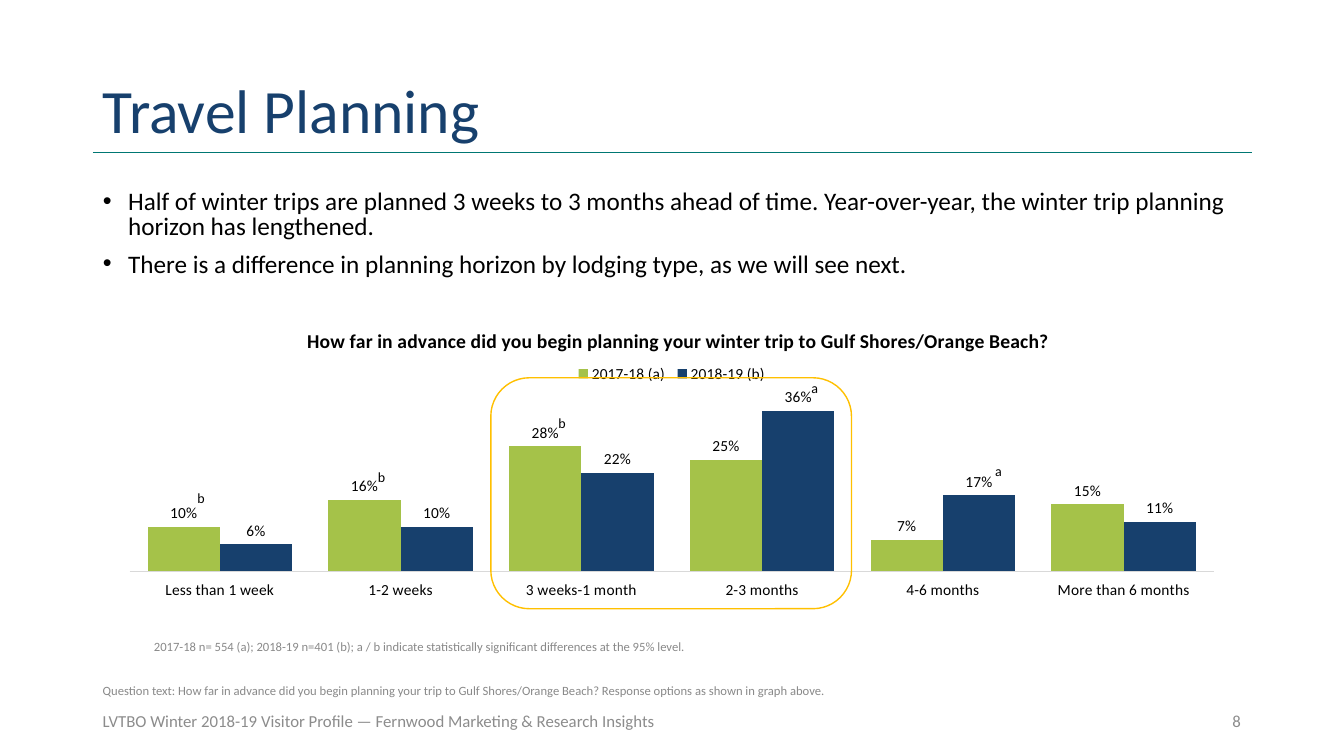
from lxml.etree import SubElement
from pptx import Presentation
from pptx.chart.data import CategoryChartData
from pptx.dml.color import RGBColor
from pptx.enum.chart import XL_CHART_TYPE as ChartType, XL_LABEL_POSITION as LabelPosition
from pptx.enum.chart import XL_LEGEND_POSITION as LegendPosition, XL_TICK_LABEL_POSITION as TickLabels
from pptx.enum.chart import XL_TICK_MARK as TickMark
from pptx.enum.shapes import MSO_CONNECTOR as Connector, MSO_SHAPE as Shape
from pptx.enum.text import MSO_ANCHOR as Anchor, MSO_AUTO_SIZE as AutoSize, PP_ALIGN as Align
from pptx.oxml import parse_xml
from pptx.oxml.ns import nsdecls, qn
from pptx.util import Cm, Pt

NAVY = RGBColor(0x17, 0x40, 0x6D)
GREEN = RGBColor(0xA5, 0xC2, 0x49)
TEAL = RGBColor(0x00, 0x77, 0x73)
GOLD = RGBColor(0xFF, 0xC0, 0x00)
BLACK = RGBColor(0x00, 0x00, 0x00)
FOOTER_GRAY = RGBColor(0x8C, 0x8C, 0x8C)
NOTE_GRAY = RGBColor(0x89, 0x89, 0x89)
AXIS_GRAY = RGBColor(0xD9, 0xD9, 0xD9)
FONT = "Calibri"

TITLE = "Travel Planning"
BULLETS = [
    "Half of winter trips are planned 3 weeks to 3 months ahead of time. "
    "Year-over-year, the winter trip planning horizon has lengthened.",
    "There is a difference in planning horizon by lodging type, as we will see next.",
]
CHART_TITLE = "How far in advance did you begin planning your winter trip to Gulf Shores/Orange Beach?"
CATEGORIES = ["Less than 1 week", "1-2 weeks", "3 weeks-1 month",
              "2-3 months", "4-6 months", "More than 6 months"]
SERIES = [
    ("2017-18 (a)", GREEN, [0.10, 0.16, 0.28, 0.25, 0.07, 0.15]),
    ("2018-19 (b)", NAVY, [0.06, 0.10, 0.22, 0.36, 0.17, 0.11]),
]
FOOTER = "LVTBO Winter 2018-19 Visitor Profile — Fernwood Marketing & Research Insights"
SAMPLE_NOTE = ("2017-18 n= 554 (a); 2018-19 n=401 (b); a / b indicate statistically "
               "significant differences at the 95% level.")
QUESTION_NOTE = ("Question text: How far in advance did you begin planning your trip to "
                 "Gulf Shores/Orange Beach? Response options as shown in graph above.")
SIGNIFICANCE_MARKS = [("a", 20.14, 9.45), ("a", 24.77, 11.53), ("b", 4.67, 12.22),
                      ("b", 9.22, 11.68), ("b", 13.77, 10.31)]

LEFT, WIDTH = 2.34, 29.21


def set_font(font, size, color, bold=False):
    """Apply the slide font with a size, colour and weight."""
    font.name, font.size, font.bold = FONT, Pt(size), bold
    font.color.rgb = color


def place(shape, left, top, width, height):
    """Move and size a shape in centimetres."""
    shape.left, shape.top, shape.width, shape.height = map(Cm, (left, top, width, height))


def add_text(slide, text, box, size, color, align=Align.LEFT, anchor=Anchor.TOP):
    """Add a one-paragraph text box."""
    frame = slide.shapes.add_textbox(*map(Cm, box)).text_frame
    frame.word_wrap = True
    frame.vertical_anchor = anchor
    paragraph = frame.paragraphs[0]
    paragraph.text, paragraph.alignment = text, align
    set_font(paragraph.font, size, color)


def set_layout(element, index, **values):
    """Give a chart part a manual layout as fractions of the chart."""
    for old in element.findall(qn("c:layout")):
        element.remove(old)
    layout = parse_xml(f"<c:layout {nsdecls('c')}><c:manualLayout/></c:layout>")
    for name, value in values.items():
        SubElement(layout[0], qn(f"c:{name}")).set("val", str(value))
    element.insert(index, layout)


def fill_placeholders(slide):
    """Fill the title and the bullet list."""
    title, body = slide.placeholders[0], slide.placeholders[1]
    place(title, LEFT, 1.02, WIDTH, 3.68)
    title.text_frame.text = TITLE
    title.text_frame.vertical_anchor = Anchor.MIDDLE
    paragraph = title.text_frame.paragraphs[0]
    paragraph.alignment, paragraph.line_spacing = Align.LEFT, 0.9
    set_font(paragraph.font, 44, NAVY)

    place(body, LEFT, 4.7, WIDTH, 2.59)
    body.text_frame.text = "\n".join(BULLETS)
    body.text_frame.auto_size = AutoSize.NONE
    for paragraph in body.text_frame.paragraphs:
        paragraph.line_spacing, paragraph.space_before = 0.8, Pt(10)
        set_font(paragraph.font, 18, BLACK)
        properties = paragraph._p.get_or_add_pPr()
        properties.set("marL", str(Cm(0.635)))
        properties.set("indent", str(-Cm(0.635)))


def add_planning_chart(slide):
    """Add the clustered columns comparing the two winters."""
    data = CategoryChartData(number_format="0%")
    data.categories = CATEGORIES
    for name, _, values in SERIES:
        data.add_series(name, values)
    box = map(Cm, (2.87, 7.7, 28.12, 7.65))
    chart = slide.shapes.add_chart(ChartType.COLUMN_CLUSTERED, *box, data).chart
    set_font(chart.font, 11, BLACK)

    chart.has_title = True
    chart.chart_title.text_frame.text = CHART_TITLE
    set_font(chart.chart_title.text_frame.paragraphs[0].font, 14, BLACK, bold=True)
    set_layout(chart.chart_title._element, 1, xMode="edge", yMode="edge", x=0.17, y=0.06)

    chart.has_legend = True
    chart.legend.position = LegendPosition.TOP
    chart.legend.include_in_layout = False
    set_font(chart.legend.font, 11, BLACK)
    set_layout(chart.legend._element, 1, xMode="edge", yMode="edge", x=0.41, y=0.19, w=0.18, h=0.07)

    plot = chart.plots[0]
    plot.gap_width, plot.overlap, plot.vary_by_categories = 50, 0, False
    set_layout(plot._element.getparent(), 0, layoutTarget="inner", xMode="edge", yMode="edge",
               x=0.014, y=0.288, w=0.972, h=0.587)
    for series, (_, color, _) in zip(plot.series, SERIES):
        series.format.fill.solid()
        series.format.fill.fore_color.rgb = color
        labels = series.data_labels
        labels.show_value, labels.position = True, LabelPosition.OUTSIDE_END
        labels.number_format, labels.number_format_is_linked = "0%", False
        set_font(labels.font, 11, BLACK)

    value_axis, category_axis = chart.value_axis, chart.category_axis
    value_axis.minimum_scale, value_axis.maximum_scale = 0, 0.4
    value_axis.has_major_gridlines = value_axis.visible = False
    category_axis.major_tick_mark = category_axis.minor_tick_mark = TickMark.NONE
    category_axis.tick_label_position = TickLabels.LOW
    category_axis.format.line.color.rgb = AXIS_GRAY
    category_axis.format.line.width = Pt(0.75)
    set_font(category_axis.tick_labels.font, 11, BLACK)


def main():
    """Build the travel planning slide."""
    presentation = Presentation()
    presentation.slide_width, presentation.slide_height = Cm(33.87), Cm(19.05)
    slide = presentation.slides.add_slide(presentation.slide_layouts[1])

    rule = slide.shapes.add_connector(Connector.STRAIGHT, Cm(LEFT), Cm(3.84), Cm(LEFT + WIDTH), Cm(3.84))
    rule.line.color.rgb, rule.line.width = TEAL, Pt(0.5)
    SubElement(rule._element.spPr, qn("a:effectLst"))

    fill_placeholders(slide)
    add_text(slide, FOOTER, (LEFT, 17.65, 24.79, 1.02), 12, FOOTER_GRAY, anchor=Anchor.MIDDLE)
    add_text(slide, "8", (27.41, 17.65, 4.11, 1.02), 12, FOOTER_GRAY, Align.RIGHT, Anchor.MIDDLE)
    add_planning_chart(slide)

    highlight = slide.shapes.add_shape(Shape.ROUNDED_RECTANGLE, *map(Cm, (12.37, 9.52, 9.09, 5.82)))
    highlight.shadow.inherit = False
    highlight.fill.background()
    highlight.line.color.rgb, highlight.line.width = GOLD, Pt(1)

    add_text(slide, SAMPLE_NOTE, (3.63, 15.98, 14, 0.64), 9, NOTE_GRAY)
    add_text(slide, QUESTION_NOTE, (LEFT, 17.09, 19.58, 0.64), 9, NOTE_GRAY)
    for letter, left, top in SIGNIFICANCE_MARKS:
        add_text(slide, letter, (left, top, 0.79, 0.69), 10, BLACK, Align.CENTER)

    presentation.save("out.pptx")


if __name__ == "__main__":
    main()
